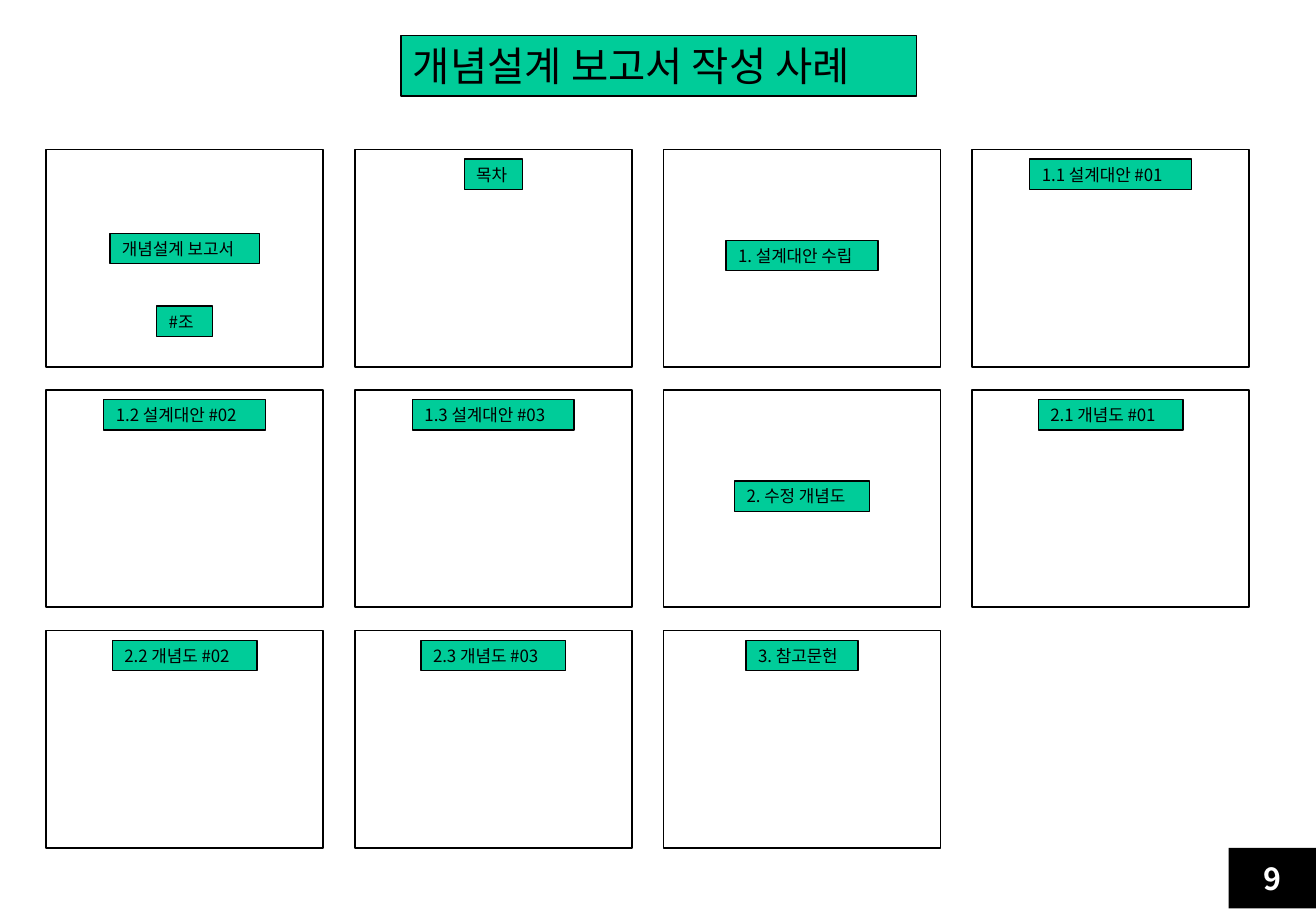
import pptx
import pptx.util
import pptx.dml.color
import pptx.enum.shapes
import pptx.enum.text
from dataclasses import dataclass

Inches = pptx.util.Inches
Align = pptx.enum.text.PP_ALIGN


@dataclass
class Theme:
    font: str = "Noto Sans CJK KR"
    black: str = "000000"
    white: str = "FFFFFF"
    green: str = "00CC99"
    title: int = 24
    page: int = 18
    label: int = 10


class Deck:
    def __init__(self, theme, width, height):
        self.theme = theme
        self.file = pptx.Presentation()
        self.file.slide_width = Inches(width)
        self.file.slide_height = Inches(height)
        self.slide = self.file.slides.add_slide(self.file.slide_layouts[6])

    def box(self, left, top, width, height, fill, line=None):
        """Draw a filled rectangle; line is the outline width in points."""
        shape = self.slide.shapes.add_shape(
            pptx.enum.shapes.MSO_SHAPE.RECTANGLE,
            Inches(left), Inches(top), Inches(width), Inches(height))
        shape.shadow.inherit = False
        shape.fill.solid()
        shape.fill.fore_color.rgb = pptx.dml.color.RGBColor.from_string(fill)
        if line:
            shape.line.color.rgb = pptx.dml.color.RGBColor.from_string(self.theme.black)
            shape.line.width = pptx.util.Pt(line)
        else:
            shape.line.fill.background()
        return shape

    def letter(self, shape, text, size, color, align, inset=0.05, bold=False):
        """Put styled text into a shape."""
        frame = shape.text_frame
        frame.text = text
        frame.word_wrap = True
        frame.vertical_anchor = pptx.enum.text.MSO_ANCHOR.MIDDLE
        frame.margin_left = frame.margin_right = Inches(0.1)
        frame.margin_top = frame.margin_bottom = Inches(inset)
        frame.paragraphs[0].alignment = align
        for run in frame.paragraphs[0].runs:
            run.font.name = self.theme.font
            run.font.size = pptx.util.Pt(size)
            run.font.bold = bold
            run.font.color.rgb = pptx.dml.color.RGBColor.from_string(color)

    def title(self, text, left, top, width, height):
        shape = self.box(left, top, width, height, self.theme.green, 0.75)
        self.letter(shape, text, self.theme.title, self.theme.black, Align.LEFT)

    def page(self, text, left, top, width, height):
        shape = self.box(left, top, width, height, self.theme.black)
        self.letter(shape, text, self.theme.page, self.theme.white, Align.CENTER, bold=True)

    def panel(self, left, top, width, height, labels):
        """Draw a framed page with labels (text, width, drop) centred across it."""
        self.box(left, top, width, height, self.theme.white, 1)
        for text, span, drop in labels:
            shape = self.box(left + (width - span) / 2, top + drop, span, 0.25,
                             self.theme.green, 0.75)
            self.letter(shape, text, self.theme.label, self.theme.black, Align.LEFT, 0.04)


HEAD, MID = 0.08, 0.75
PANELS = [
    [("개념설계 보고서", 1.23, 0.69), ("#조", 0.46, 1.29)],
    [("목차", 0.48, HEAD)],
    [("1. 설계대안 수립", 1.25, MID)],
    [("1.1 설계대안 #01", 1.33, HEAD)],
    [("1.2 설계대안 #02", 1.33, HEAD)],
    [("1.3 설계대안 #03", 1.33, HEAD)],
    [("2. 수정 개념도", 1.11, MID)],
    [("2.1 개념도 #01", 1.19, HEAD)],
    [("2.2 개념도 #02", 1.19, HEAD)],
    [("2.3 개념도 #03", 1.19, HEAD)],
    [("3. 참고문헌", 0.92, HEAD)],
]


def main():
    deck = Deck(Theme(), 10.83, 7.5)
    deck.page("9", 10.11, 6.98, 0.72, 0.5)
    deck.title("개념설계 보고서 작성 사례", 3.3, 0.29, 4.24, 0.5)
    for index, labels in enumerate(PANELS):
        row, col = divmod(index, 4)
        deck.panel(0.38 + 2.54 * col, 1.23 + 1.98 * row, 2.28, 1.79, labels)
    deck.file.save("out.pptx")


if __name__ == "__main__":
    main()
